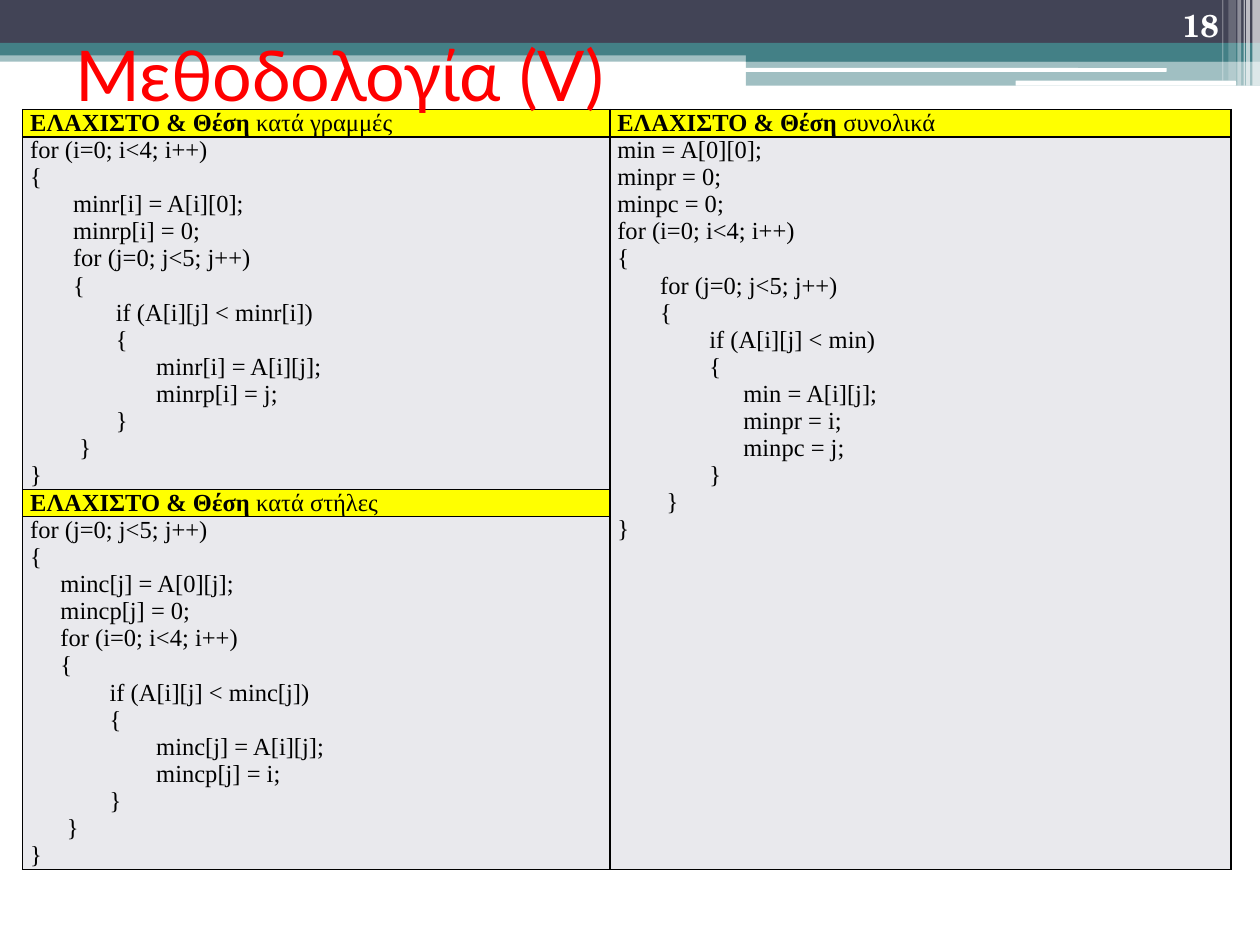
import pptx
import pptx.util
import pptx.dml.color
import pptx.enum.shapes
import pptx.enum.text
import pptx.oxml
import pptx.oxml.ns
import lxml.etree

Inches = pptx.util.Inches
RGB = pptx.dml.color.RGBColor
KIND = pptx.enum.shapes.MSO_SHAPE
ALIGN = pptx.enum.text.PP_ALIGN
ANCHOR = pptx.enum.text.MSO_ANCHOR
qn = pptx.oxml.ns.qn

NAVY = RGB(0x42, 0x44, 0x56)
TEAL = RGB(0x43, 0x80, 0x86)
WHITE = RGB(0xFF, 0xFF, 0xFF)
BLACK = RGB(0, 0, 0)
RED = RGB(0xFF, 0, 0)
YELLOW = RGB(0xFF, 0xFF, 0)
GREY = RGB(0xE9, 0xE9, 0xED)

CODE = {"name": "Times New Roman", "size": pptx.util.Pt(14), "bold": False}
TITLE = {"name": "Lato", "size": pptx.util.Pt(40), "bold": False}
NUMBER = {"name": "TeX Gyre Schola", "size": pptx.util.Pt(18), "bold": True}

# Bars of the banner: left, top, width, height, colour, opacity in percent
BARS = [
    (0, 0.4, 10, 0.09, TEAL, 50),
    (0, 0, 10, 0.34, NAVY, 100),
    (0, 0.34, 10, 0.1, TEAL, 100),
    (5.92, 0.39, 4.08, 0.1, TEAL, 100),
    (5.92, 0.48, 4.08, 0.2, TEAL, 50),
]
SLITS = [(5.91, 0.54, 3.35, 0.03, WHITE, 100), (8.06, 0.64, 1.75, 0.04, WHITE, 100)]
STRIPES = [
    (9.94, 0, 0.06, 0.68, WHITE, 65),
    (9.89, 0, 0.03, 0.68, WHITE, 65),
    (9.87, 0, 0.01, 0.68, WHITE, 60),
    (9.82, 0, 0.03, 0.68, WHITE, 40),
    (9.75, 0, 0.06, 0.64, WHITE, 20),
    (9.7, 0, 0.01, 0.64, WHITE, 30),
]

# Code lines: indent in inches, text
ROWS = [
    (0, "for (i=0; i<4; i++)"),
    (0, "{"),
    (0.34, "minr[i] = A[i][0];"),
    (0.34, "minrp[i] = 0;"),
    (0.34, "for (j=0; j<5; j++)"),
    (0.34, "{"),
    (0.68, "if (A[i][j] < minr[i])"),
    (0.68, "{"),
    (1, "minr[i] = A[i][j];"),
    (1, "minrp[i] = j;"),
    (0.68, "}"),
    (0.39, "}"),
    (0, "}"),
]
COLS = [
    (0, "for (j=0; j<5; j++)"),
    (0, "{"),
    (0.24, "minc[j] = A[0][j];"),
    (0.24, "mincp[j] = 0;"),
    (0.24, "for (i=0; i<4; i++)"),
    (0.24, "{"),
    (0.63, "if (A[i][j] < minc[j])"),
    (0.63, "{"),
    (1, "minc[j] = A[i][j];"),
    (1, "mincp[j] = i;"),
    (0.63, "}"),
    (0.29, "}"),
    (0, "}"),
]
WHOLE = [
    (0, "min = A[0][0];"),
    (0, "minpr = 0;"),
    (0, "minpc = 0;"),
    (0, "for (i=0; i<4; i++)"),
    (0, "{"),
    (0.34, "for (j=0; j<5; j++)"),
    (0.34, "{"),
    (0.73, "if (A[i][j] < min)"),
    (0.73, "{"),
    (1, "min = A[i][j];"),
    (1, "minpr = i;"),
    (1, "minpc = j;"),
    (0.73, "}"),
    (0.39, "}"),
    (0, "}"),
]


def add_run(para, text, form, color, **extra):
    run = para.add_run()
    run.text = text
    for key, value in {**form, **extra}.items():
        setattr(run.font, key, value)
    run.font.color.rgb = color


def add_bars(slide, bars, kind):
    for left, top, width, height, color, alpha in bars:
        box = [Inches(v) for v in (left, top, width, height)]
        bar = slide.shapes.add_shape(kind, *box)
        bar.shadow.inherit = False
        bar.line.fill.background()
        bar.fill.solid()
        bar.fill.fore_color.rgb = color
        if alpha < 100:
            tone = bar.fill._xPr.find(".//" + qn("a:srgbClr"))
            lxml.etree.SubElement(tone, qn("a:alpha"), val=str(alpha * 1000))


def add_title(slide, left, top, width, height):
    title = slide.shapes.title
    place = {"left": left, "top": top, "width": width, "height": height}
    for key, value in place.items():
        setattr(title, key, value)
    title.text_frame.vertical_anchor = ANCHOR.MIDDLE
    para = title.text_frame.paragraphs[0]
    para.alignment = ALIGN.LEFT
    add_run(para, "Μεθοδολογία (V)", TITLE, RED)
    slide.shapes._spTree.append(title._element)  # in front of the table


def add_number(slide, left, top, width, height):
    frame = slide.shapes.add_textbox(left, top, width, height).text_frame
    frame.word_wrap = True
    frame.vertical_anchor = ANCHOR.BOTTOM
    frame.paragraphs[0].alignment = ALIGN.RIGHT
    add_run(frame.paragraphs[0], "18", NUMBER, WHITE)


def style_cell(cell, color):
    form = {"margin_left": Inches(0.06), "margin_right": Inches(0.06),
            "margin_top": 0, "margin_bottom": 0, "vertical_anchor": ANCHOR.TOP}
    for key, value in form.items():
        setattr(cell, key, value)
    cell.fill.solid()
    cell.fill.fore_color.rgb = color
    props = cell._tc.get_or_add_tcPr()
    for spot, side in enumerate(("a:lnL", "a:lnR", "a:lnT", "a:lnB")):
        line = lxml.etree.Element(qn(side), w=str(pptx.util.Pt(1)))
        fill = lxml.etree.SubElement(line, qn("a:solidFill"))
        lxml.etree.SubElement(fill, qn("a:srgbClr"), val=str(BLACK))
        props.insert(spot, line)


def add_head(cell, scope):
    para = cell.text_frame.paragraphs[0]
    add_run(para, "ΕΛΑΧΙΣΤΟ & Θέση ", CODE, BLACK, bold=True)
    add_run(para, scope, CODE, BLACK)


def add_code(cell, lines):
    frame = cell.text_frame
    for spot, (indent, text) in enumerate(lines):
        para = frame.add_paragraph() if spot else frame.paragraphs[0]
        para._p.get_or_add_pPr().set("marL", str(Inches(indent)))
        add_run(para, text, CODE, BLACK)


def add_grid(slide, left, top, width, height):
    table = slide.shapes.add_table(4, 2, left, top, width, height).table
    for col, size in zip(table.columns, (4.66, 4.93)):
        col.width = Inches(size)
    for row, size in zip(table.rows, (0.21, 2.8, 0.21, 2.8)):
        row.height = Inches(size)
    table.cell(1, 1).merge(table.cell(3, 1))
    for r in range(4):
        for c in range(2):
            head = r == 0 or (r == 2 and c == 0)
            style_cell(table.cell(r, c), YELLOW if head else GREY)
    parts = [(0, 0, "κατά γραμμές", ROWS), (2, 0, "κατά στήλες", COLS),
             (0, 1, "συνολικά", WHOLE)]
    for r, c, scope, lines in parts:
        add_head(table.cell(r, c), scope)
        add_code(table.cell(r + 1, c), lines)


def main():
    deck = pptx.Presentation()
    deck.slide_width, deck.slide_height = Inches(10), Inches(7.5)
    slide = deck.slides.add_slide(deck.slide_layouts[5])
    # Banner
    add_bars(slide, BARS, KIND.RECTANGLE)
    add_bars(slide, SLITS, KIND.ROUNDED_RECTANGLE)
    add_bars(slide, STRIPES, KIND.RECTANGLE)
    # Content
    add_grid(slide, Inches(0.18), Inches(0.87), Inches(9.59), Inches(6.02))
    add_title(slide, Inches(0.5), Inches(0), Inches(9), Inches(1.17))
    add_number(slide, Inches(8.94), Inches(0), Inches(0.83), Inches(0.4))
    deck.save("out.pptx")


if __name__ == "__main__":
    main()
